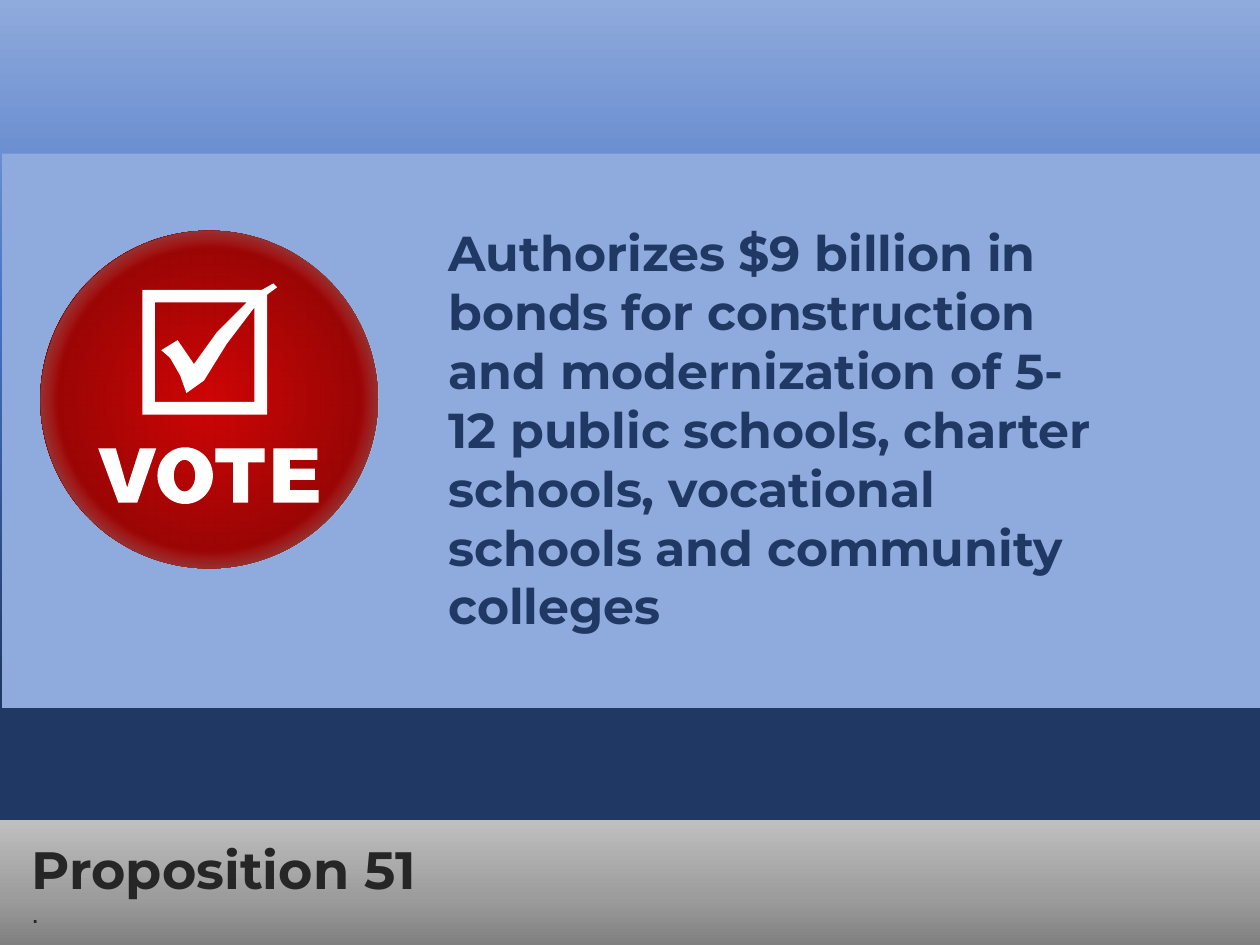
from math import cos, pi, sin

from lxml import etree
from pptx import Presentation
from pptx.dml.color import RGBColor
from pptx.enum.shapes import MSO_SHAPE
from pptx.enum.text import MSO_ANCHOR, MSO_AUTO_SIZE, PP_ALIGN
from pptx.oxml.ns import qn
from pptx.util import Pt

RECT, OVAL = MSO_SHAPE.RECTANGLE, MSO_SHAPE.OVAL
TOP, LEFT, FIXED = MSO_ANCHOR.TOP, PP_ALIGN.LEFT, MSO_AUTO_SIZE.NONE

INK = {
    "sky": "8FAADC", "blue": "4472C4", "navy": "203864",
    "pale": "BFBFBF", "mid": "9D9D9D", "gray": "808080", "text": "262626",
    "red": "CC0000", "deep": "990000", "dark": "660000",
    "mist": "F2F2F2", "white": "FFFFFF",
}
UNIT = 0.72
ARCS = 48


def rgb(name):
    return RGBColor.from_string(INK[name])


def blend(root, stops, round_path=False):
    old = next(root.iter(qn("a:solidFill")))
    grad = etree.Element(qn("a:gradFill"), rotWithShape="1")
    marks = etree.SubElement(grad, qn("a:gsLst"))
    for pos, name, *alpha in stops:
        mark = etree.SubElement(marks, qn("a:gs"), pos=str(pos * 1000))
        tint = etree.SubElement(mark, qn("a:srgbClr"), val=INK[name])
        for part in alpha:
            etree.SubElement(tint, qn("a:alpha"), val=str(part * 1000))
    if round_path:
        route = etree.SubElement(grad, qn("a:path"), path="circle")
        half = dict.fromkeys("ltrb", "50000")
        etree.SubElement(route, qn("a:fillToRect"), **half)
    else:
        etree.SubElement(grad, qn("a:lin"), ang="5400000", scaled="0")
    old.getparent().replace(old, grad)


def paint(shape, name):
    shape.shadow.inherit = False
    shape.line.fill.background()
    shape.fill.solid()
    shape.fill.fore_color.rgb = rgb(name)


def add_form(shapes, kind, box, name):
    shape = shapes.add_shape(kind, *map(Pt, box))
    paint(shape, name)
    return shape


def write(shape, box, text, font, size, name, bold=False):
    shape.left, shape.top, shape.width, shape.height = map(Pt, box)
    frame = shape.text_frame
    frame.text = text
    frame.word_wrap = True
    frame.auto_size = FIXED
    frame.vertical_anchor = TOP
    para = frame.paragraphs[0]
    para.alignment = LEFT
    para.space_before = Pt(0)
    para.font.name = font
    para.font.size = Pt(size)
    para.font.bold = bold
    para.font.color.rgb = rgb(name)
    return para


def raise_up(slide, shape):
    slide.shapes.element.append(shape.element)


def plain(para):
    props = para._p.get_or_add_pPr()
    props.set("marL", "0")
    props.set("indent", "0")
    font = props.find(qn("a:defRPr"))
    font.addprevious(etree.Element(qn("a:buNone")))


def ring(x, y, wide, high):
    turns = [2 * pi * i / ARCS for i in range(ARCS)]
    return [(x + wide * cos(t), y + high * sin(t)) for t in turns]


def walk(x, y, *steps):
    spots = [(x, y)]
    for i, step in enumerate(steps):
        if i % 2:
            y += step
        else:
            x += step
        spots.append((x, y))
    return spots


def add_glyph(shapes, *outlines):
    first, *rest = [[(Pt(x * UNIT), Pt(y * UNIT)) for x, y in line]
                    for line in outlines]
    pen = shapes.build_freeform(*first[0])
    pen.add_line_segments(first[1:], close=True)
    for spots in rest:
        pen.move_to(*spots[0])
        pen.add_line_segments(spots[1:], close=True)
    paint(pen.convert_to_shape(), "white")


def add_vote(shapes):
    add_glyph(shapes, [(78, 356), (92, 356), (101, 387), (111, 356),
                       (124, 356), (109, 399), (94, 399)])
    add_glyph(shapes, ring(147, 377.5, 22, 22.5), ring(146.5, 377.5, 8.5, 12.5))
    add_glyph(shapes, walk(171, 356, 39, 11, -13, 32, -12, -32, -14))
    add_glyph(shapes, walk(217, 356, 35, 9, -22, 7, 20, 9, -20, 8, 23, 10, -36))


def add_check(shapes):
    edge = walk(212, 329, -99, -99, 95) + [(217, 225), (220, 228), (212, 234)]
    tick = [(180, 273), (162, 302), (148, 312), (143, 298), (135, 284),
            (128, 278), (141, 270), (154, 289), (172, 264)]
    add_glyph(shapes, edge, [(202, 244)] + tick + walk(196, 240, -73, 79, 79))


def add_badge(slide):
    shapes = slide.shapes.add_group_shape().shapes
    box = (23, 131.8, 193, 193)
    disc = add_form(shapes, OVAL, box, "red")
    blend(disc.element, [(0, "red"), (66, "deep"), (76, "dark")], True)
    add_vote(shapes)
    add_check(shapes)
    gloss = add_form(shapes, OVAL, box, "mist")
    blend(gloss.element, [(63, "mist", 1), (100, "pale")], True)


def main():
    deck = Presentation()
    deck.slide_width, deck.slide_height = Pt(720), Pt(540)
    slide = deck.slides.add_slide(deck.slide_layouts[1])
    title, body = slide.placeholders

    slide.background.fill.solid()
    blend(slide.element, [(0, "sky"), (33, "blue"), (73, "navy")])

    bar = add_form(slide.shapes, RECT, (0, 468.6, 720, 71.4), "pale")
    blend(bar.element, [(0, "pale"), (61, "mid"), (100, "gray")])

    box = (10.8, 508.3, 432, 26.6)
    note = slide.shapes.add_textbox(*map(Pt, box))
    write(note, box, ".", "Arial", 16, "text")

    write(title, (10.8, 474.5, 710.6, 44), "Proposition 51",
          "Montserrat", 30, "text", True)
    raise_up(slide, title)

    add_form(slide.shapes, RECT, (1.2, 87.8, 720, 316.8), "sky")
    plain(write(body, (249.1, 123.8, 391, 244.8),
                "Authorizes $9 billion in bonds for construction and "
                "modernization of 5-12 public schools, charter schools, "
                "vocational schools and community colleges",
                "Montserrat", 28, "navy", True))
    raise_up(slide, body)

    add_badge(slide)
    deck.save("out.pptx")


if __name__ == "__main__":
    main()
